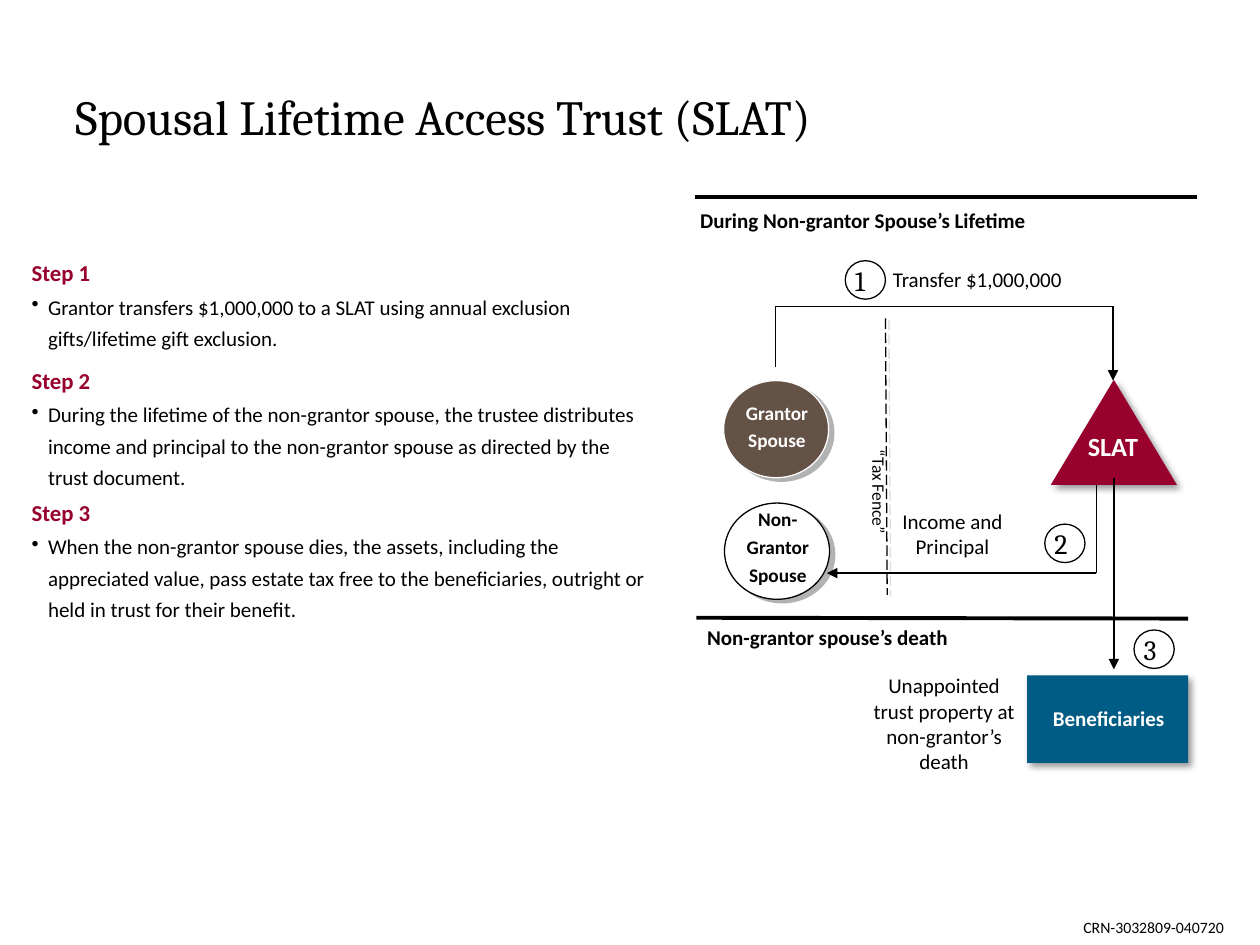
from lxml.etree import SubElement
from pptx import Presentation
from pptx.dml.color import RGBColor
from pptx.enum.dml import MSO_LINE_DASH_STYLE as Dash
from pptx.enum.shapes import MSO_CONNECTOR as Link, MSO_SHAPE as Form
from pptx.enum.text import MSO_ANCHOR as Anchor, PP_ALIGN as Align
from pptx.oxml.ns import qn
from pptx.util import Pt


class Theme:
    black, white = "000000", "FFFFFF"
    red, brown, blue = "98002E", "645246", "005C84"
    sans, serif = "Calibri", "Cambria"
    title, mark, trust, step, body, name, fence, note = 28, 16, 15, 13, 12, 11, 10, 9
    thin, thick = 0.75, 2.25
    # colour, opacity %, blur, distance, angle
    hard = ("B2B2B2", 100, 0, 3.6, 34)
    soft = ("000000", 40, 4, 3, 45)
    faint = ("DDDDDD", 100, 0, 2.2, 27)


T = Theme

# heading, space before it, bullet text
STEPS = [
    ("Step 1", 2, "Grantor transfers $1,000,000 to a SLAT using annual exclusion "
     "gifts/lifetime gift exclusion."),
    ("Step 2", 5, "During the lifetime of the non-grantor spouse, the trustee "
     "distributes income and principal to the non-grantor spouse as directed by "
     "the trust document."),
    ("Step 3", 1, "When the non-grantor spouse dies, the assets, including the "
     "appreciated value, pass estate tax free to the beneficiaries, outright or "
     "held in trust for their benefit."),
]

# form, box, fill, line, shadow
PARTIES = [
    (Form.OVAL, (413.5, 217.5, 60, 55.5), T.brown, T.white, T.hard),
    (Form.OVAL, (414, 287.5, 60, 55), T.white, T.black, T.hard),
    (Form.ISOSCELES_TRIANGLE, (600.5, 217, 72, 60), T.red, None, T.soft),
    (Form.RECTANGLE, (587, 386, 92, 50), T.blue, None, T.soft),
]

# start, end, width, arrowhead
LINES = [
    ((397, 112.5), (684, 112.5), T.thick, False),
    ((398, 353), (679, 353.5), T.thick, False),
    ((443, 209.5), (443, 175), T.thin, False),
    ((443, 175), (636, 175), T.thin, False),
    ((636, 175), (636, 217.5), T.thin, True),
    ((626.5, 277), (626.5, 327.5), T.thin, False),
    ((626.5, 327.5), (472.5, 327.5), T.thin, True),
    ((636.5, 273), (636.5, 382.5), T.thin, True),
]
FENCE = (506, 182), (507, 340)

# lines, box, size, colour, bold, align
LABELS = [
    (["During Non-grantor Spouse’s Lifetime"], (393, 115, 202, 22),
     T.body, T.black, True, Align.LEFT),
    (["Non-grantor spouse’s death"], (397, 353.5, 184, 22),
     T.body, T.black, True, Align.LEFT),
    (["Grantor", "Spouse"], (384, 225.5, 120, 37), T.name, T.white, True, Align.CENTER),
    (["Non-", "Grantor", "Spouse"], (384.5, 286.5, 120, 54),
     T.name, T.black, True, Align.CENTER),
    (["SLAT"], (588, 242.5, 96, 25), T.trust, T.white, True, Align.CENTER),
    (["Beneficiaries"], (587.5, 399.5, 92, 22), T.body, T.white, True, Align.CENTER),
    (["Transfer $1,000,000"], (486.5, 149, 144, 22),
     T.body, T.black, False, Align.CENTER),
    (["Income and Principal"], (506, 287, 76.5, 36),
     T.body, T.black, False, Align.CENTER),
    (["Unappointed trust property at non-grantor’s death"], (488, 381, 103, 66),
     T.body, T.black, False, Align.CENTER),
    (["CRN-3032809-040720"], (612, 521, 108, 17), T.note, T.black, False, Align.LEFT),
]
MARKS = [("1", 483, 149), ("2", 597, 299.5), ("3", 648, 360)]

deck = Presentation()
deck.slide_width, deck.slide_height = Pt(720), Pt(540)
slide = deck.slides.add_slide(deck.slide_layouts[6])
shapes = slide.shapes


def rgb(code):
    return RGBColor.from_string(code)


def shade(item, shadow=None):
    """Give the item the shadow, or an empty effect list."""
    props = item._element.spPr
    fx = SubElement(props, qn("a:effectLst"))
    if shadow:
        code, alpha, blur, dist, angle = shadow
        outer = SubElement(fx, qn("a:outerShdw"), blurRad=str(Pt(blur)),
                           dist=str(Pt(dist)), dir=str(angle * 60000),
                           algn="tl", rotWithShape="0")
        tint = SubElement(outer, qn("a:srgbClr"), val=code)
        SubElement(tint, qn("a:alpha"), val=str(alpha * 1000))


def draw(form, box, fill, line, shadow=None):
    item = shapes.add_shape(form, *map(Pt, box))
    if fill:
        item.fill.solid()
        item.fill.fore_color.rgb = rgb(fill)
    else:
        item.fill.background()
    if line:
        item.line.color.rgb = rgb(line)
        item.line.width = Pt(T.thin)
    else:
        item.line.fill.background()
    shade(item, shadow)


def link(start, end, width, arrow=False, shadow=None):
    item = shapes.add_connector(Link.STRAIGHT, *map(Pt, start + end))
    item.line.color.rgb = rgb(T.black)
    item.line.width = Pt(width)
    if arrow:
        SubElement(item.line._get_or_add_ln(), qn("a:tailEnd"), type="triangle")
    shade(item, shadow)
    return item


def frame(box):
    text = shapes.add_textbox(*map(Pt, box)).text_frame
    text.word_wrap = True
    return text


def add(text, words, size, color=T.black, bold=False, align=Align.LEFT, face=T.sans):
    """Fill the first paragraph if it is empty, else append one."""
    para = text.paragraphs[-1]
    if para.runs:
        para = text.add_paragraph()
    para.add_run().text = words
    para.alignment = align
    font = para.font
    font.name, font.size, font.bold = face, Pt(size), bold
    font.color.rgb = rgb(color)
    return para


def space(para, before):
    para.line_spacing = 1.25
    para.space_before = Pt(before)


steps = frame((11, 140.5, 368, 221))
for head, gap, detail in STEPS:
    space(add(steps, head, T.step, T.red, True), gap)
    para = add(steps, detail, T.body)
    space(para, 1)
    props = para._p.get_or_add_pPr()
    props.set("marL", str(Pt(9.4)))
    props.set("indent", str(-Pt(9.4)))
    bullet = props.makeelement(qn("a:buChar"), {"char": "•"})
    props.find(qn("a:defRPr")).addprevious(bullet)

for party in PARTIES:
    draw(*party)
for line in LINES:
    link(*line)
link(*FENCE, T.thin, shadow=T.faint).line.dash_style = Dash.LONG_DASH

for lines, box, *style in LABELS:
    label = frame(box)
    for i, words in enumerate(lines):
        add(label, words, *style).space_before = Pt(2.75 if i else 0)

fence = frame((485, 250, 27, 63))
fence._txBody.bodyPr.set("vert", "eaVert")
add(fence, "“Tax Fence”", T.fence, align=Align.CENTER)

for digit, x, y in MARKS:
    draw(Form.OVAL, (x, y, 23, 22), None, T.black)
    add(frame((x - 1.5, y - 2, 25, 25)), digit, T.mark, face=T.serif)

title = frame((36, 21.5, 648, 90))
title.vertical_anchor = Anchor.MIDDLE
add(title, "Spousal Lifetime Access Trust (SLAT)", T.title, face=T.serif)

deck.save("out.pptx")
